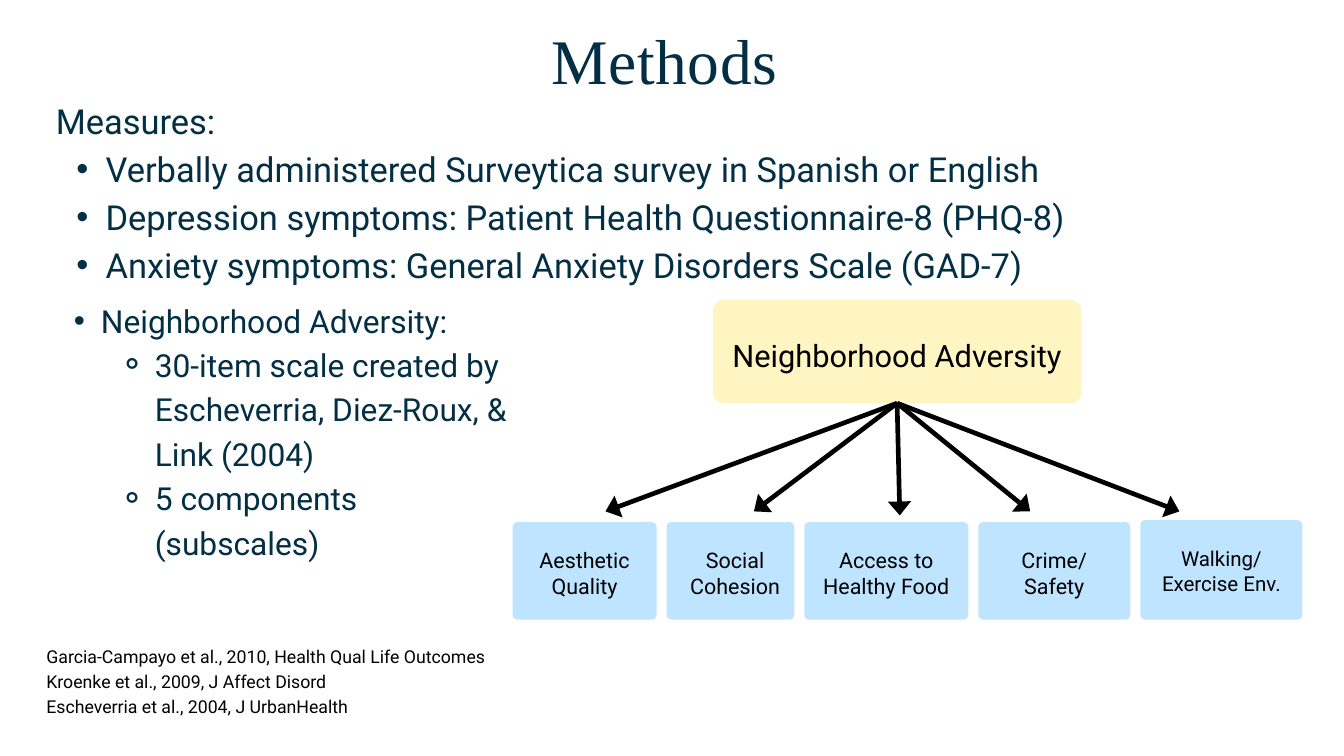
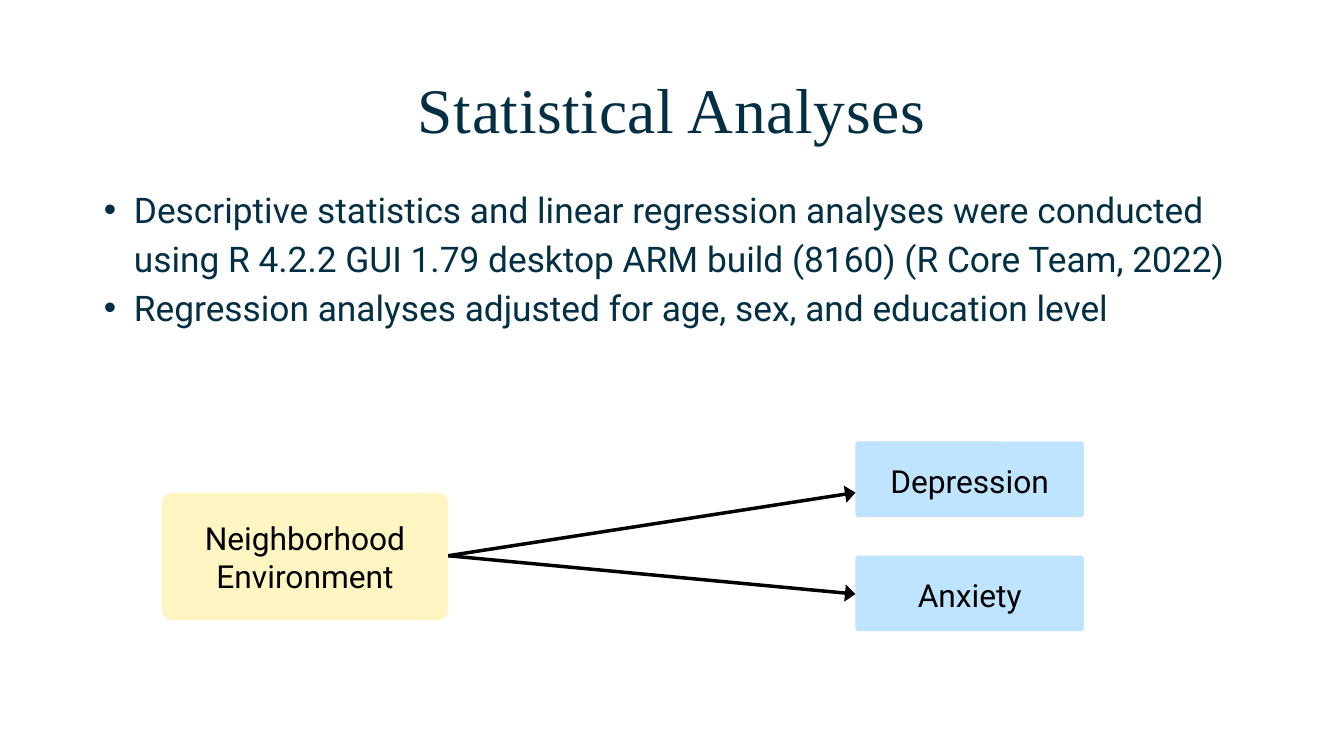
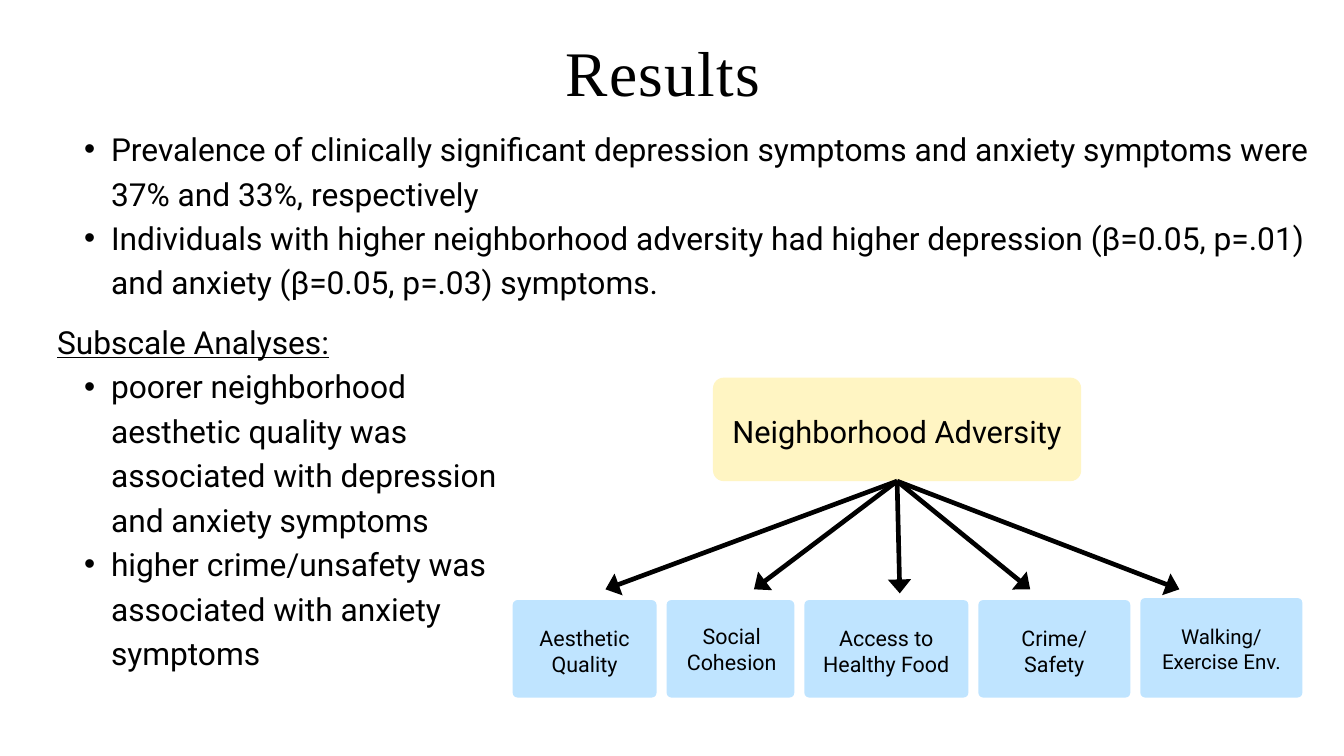
from typing import NamedTuple

from lxml import etree
from pptx import Presentation
from pptx.dml import color
from pptx.enum import shapes, text
from pptx.oxml import ns
from pptx.util import Inches, Pt

NAVY, BLACK, CREAM, SKY = "032F44", "000000", "FFF5C3", "BFE4FF"
SANS, SERIF = "Roboto", "Times New Roman"
BULLETS = {1: "•", 2: "⚬"}
LEFT, MID = text.PP_ALIGN.LEFT, text.PP_ALIGN.CENTER


class Para(NamedTuple):
    words: str
    level: int = 0  # 0 is plain text, 1 and 2 are bullets
    under: bool = False
    margin: float = 0


class Area(NamedTuple):
    left: float
    top: float
    width: float
    height: float

    def emu(self) -> list:
        return [Inches(v) for v in self]


class Scale(NamedTuple):
    words: tuple
    width: float
    tip: float  # where the arrow ends
    size: float = 23
    rise: float = 0  # how far the box stands above the row


SCALES = [
    Scale(("Aesthetic Quality",), 2.14, 9.01),
    Scale(("Social Cohesion",), 1.9, 11.22),
    Scale(("Access to Healthy Food",), 2.44, 13.39),
    Scale(("Crime/ Safety",), 2.26, 15.33),
    Scale(("Walking/", "Exercise Env."), 2.41, 17.55, 22, 0.03),
]


def rgb(code: str) -> color.RGBColor:
    return color.RGBColor.from_string(code)


# Text
def bullet(par, level: int, size: float) -> None:
    margin = level * size * 0.0236
    props = par._p.get_or_add_pPr()
    props.set("lvl", str(level))
    props.set("marL", str(Inches(margin)))
    props.set("indent", str(-Inches(margin / (level + 1))))
    etree.SubElement(props, ns.qn("a:buFont")).set("typeface", "Arial")
    etree.SubElement(props, ns.qn("a:buChar")).set("char", BULLETS[level])


def write(frame, paras, size: float, font=SANS, ink=BLACK, align=LEFT,
          lead=1.4, track=0.0, pads=(0, 0, 0, 0)) -> None:
    frame.word_wrap = True
    (frame.margin_left, frame.margin_top,
     frame.margin_right, frame.margin_bottom) = [Inches(p) for p in pads]
    for n, item in enumerate(paras):
        item = Para(item) if isinstance(item, str) else item
        par = frame.add_paragraph() if n else frame.paragraphs[0]
        if item.level:
            bullet(par, item.level, size)
        elif item.margin:
            par._p.get_or_add_pPr().set("marL", str(Inches(item.margin)))
        par.alignment = align
        par.line_spacing = Pt(size * lead)
        run = par.add_run()
        run.text = item.words
        run.font.size, run.font.name = Pt(size), font
        run.font.color.rgb = rgb(ink)
        if item.under:
            run.font.underline = True
        if track:
            run._r.get_or_add_rPr().set("spc", str(round(track * 100)))


def label(slide, area: Area, paras, size: float, **form) -> None:
    write(slide.shapes.add_textbox(*area.emu()).text_frame, paras, size, **form)


def title(slide, words: str, area: Area, ink=NAVY, lead=1.2, track=0.7) -> None:
    label(slide, area, [words], 68, font=SERIF, ink=ink, align=MID,
          lead=lead, track=track)


# Diagram parts
def box(slide, area: Area, words, fill: str, size: float, round_by: float,
        dx=0.0, dy=0.0) -> None:
    """Rounded box whose text sits dx, dy away from the centre."""
    item = slide.shapes.add_shape(
        shapes.MSO_SHAPE.ROUNDED_RECTANGLE, *area.emu())
    item.adjustments[0] = round_by / min(area.width, area.height)
    item.shadow.inherit = False
    item.fill.solid()
    item.fill.fore_color.rgb = rgb(fill)
    item.line.fill.background()
    item.text_frame.vertical_anchor = text.MSO_ANCHOR.MIDDLE
    write(item.text_frame, words, size, align=MID, lead=1.2,
          pads=(0.2 + dx, 0.1 + dy, 0.2 - dx, 0.1 - dy))


def arrow(slide, start: tuple, end: tuple, width: float) -> None:
    line = slide.shapes.add_connector(
        shapes.MSO_CONNECTOR.STRAIGHT, *[Inches(v) for v in start + end])
    line.line.color.rgb = rgb(BLACK)
    line.line.width = Pt(width)
    head = etree.SubElement(line.line._get_or_add_ln(), ns.qn("a:tailEnd"))
    head.set("type", "triangle")
    head.set("w", "lg")
    etree.SubElement(line._element.spPr, ns.qn("a:effectLst"))


def tree(slide, top: float, hub_dy: float, social: tuple) -> None:
    """Hub box with an arrow to each subscale; social nudges that label."""
    hub = Area(10.61, top, 5.48, 1.54)
    root = (hub.left + hub.width / 2, top + hub.height)
    row, gap, left = top + 3.31, 0.15, 7.63
    box(slide, hub, ["Neighborhood Adversity"], CREAM, 33, 0.16, dy=hub_dy)
    for n, part in enumerate(SCALES):
        tip = row - (0.1 if n == 2 else 0.16)
        arrow(slide, root, (part.tip, tip), 5)
        dx, dy = social if n == 1 else (0, 0.03 - part.rise / 2)
        area = Area(left, row - part.rise, part.width, 1.45 + part.rise)
        box(slide, area, part.words, SKY, part.size, 0.07, dx, dy)
        left += part.width + gap


# Slides
def methods(slide) -> None:
    label(slide, Area(0.7, 1.38, 18.18, 2.8), [
        Para("Measures:", margin=0.13),
        Para("Verbally administered Surveytica survey in Spanish or English", 1),
        Para("Depression symptoms: Patient Health Questionnaire-8 (PHQ-8)", 1),
        Para("Anxiety symptoms: General Anxiety Disorders Scale (GAD-7)", 1),
    ], 36.9, ink=NAVY)
    title(slide, "Methods", Area(3.97, 0.31, 11.84, 1.14))
    tree(slide, 4.46, 0.05, (0.07, 0.03))
    label(slide, Area(0.7, 4.39, 7.1, 3.92), [
        Para("Neighborhood Adversity:", 1),
        Para("30-item scale created by Escheverria, Diez-Roux, & Link (2004)", 2),
        Para("5 components (subscales)", 2),
    ], 34, ink=NAVY)
    label(slide, Area(0.69, 9.56, 8.86, 1.45), [
        "Garcia-Campayo et al., 2010, Health Qual Life Outcomes",
        "Kroenke et al., 2009, J Affect Disord",
        "Escheverria et al., 2004, J UrbanHealth",
    ], 19)


def analyses(slide) -> None:
    label(slide, Area(1.1, 2.69, 17.81, 2.88), [
        Para("Descriptive statistics and linear regression analyses were "
             "conducted using R 4.2.2 GUI 1.79 desktop ARM build (8160) "
             "(R Core Team, 2022)", 1),
        Para("Regression analyses adjusted for age, sex, and education level", 1),
    ], 37.8, ink=NAVY)
    title(slide, "Statistical Analyses", Area(4.08, 1.05, 11.84, 1.14))
    box(slide, Area(2.41, 7.33, 4.26, 1.9), ["Neighborhood Environment"],
        CREAM, 34, 0.16)
    for words, top, tip in [("Depression", 6.57, 7.33), ("Anxiety", 8.27, 8.84)]:
        box(slide, Area(12.73, top, 3.4, 1.12), [words], SKY, 34, 0.04, dy=0.02)
        arrow(slide, (6.67, 8.27), (12.73, tip), 3.75)


def results(slide) -> None:
    title(slide, "Results", Area(8.23, 0.21, 3.28, 1.36), BLACK, 1.5, 1.4)
    label(slide, Area(0.85, 1.84, 19.15, 2.6), [
        Para("Prevalence of clinically significant depression symptoms and "
             "anxiety symptoms were 37% and 33%, respectively", 1),
        Para("Individuals with higher neighborhood adversity had higher "
             "depression (β=0.05, p=.01) and anxiety (β=0.05, p=.03) "
             "symptoms.", 1),
    ], 34)
    tree(slide, 5.62, 0.02, (0.02, 0))
    label(slide, Area(0.85, 4.71, 6.61, 6.4), [
        Para("Subscale Analyses:", under=True),
        Para("poorer neighborhood aesthetic quality was associated with "
             "depression and anxiety symptoms", 1),
        Para("higher crime/unsafety was associated with anxiety symptoms", 1),
    ], 34)


def main() -> None:
    deck = Presentation()
    deck.slide_width, deck.slide_height = Inches(20), Inches(11.25)
    for build in (methods, analyses, results):
        build(deck.slides.add_slide(deck.slide_layouts[6]))
    deck.save("out.pptx")


if __name__ == "__main__":
    main()
